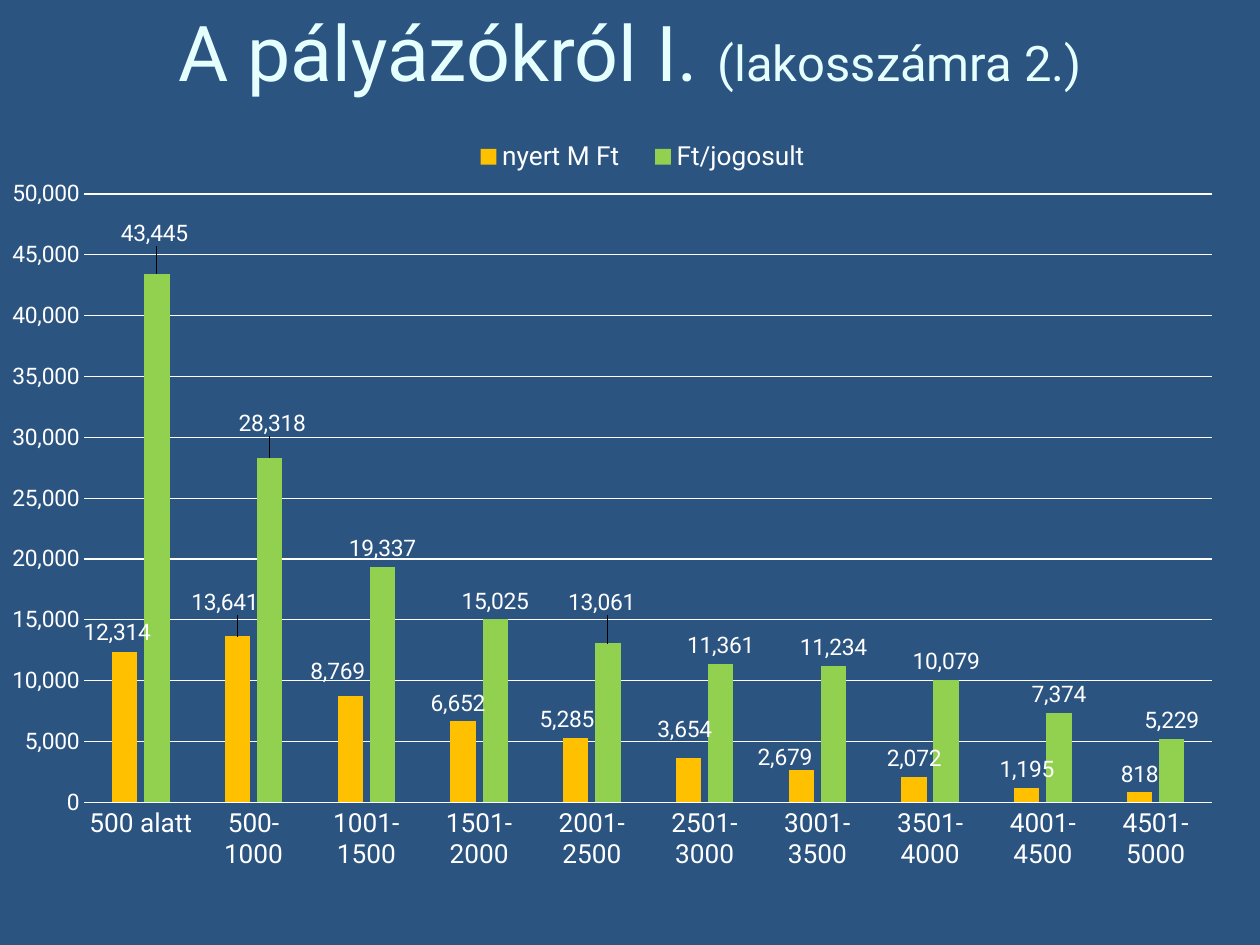
from dataclasses import dataclass, field

import lxml.etree
import pptx
import pptx.chart.data
import pptx.dml.color
import pptx.enum.chart
import pptx.enum.text
import pptx.oxml.ns
import pptx.util

Inches = pptx.util.Inches
qn = pptx.oxml.ns.qn


@dataclass(frozen=True)
class Theme:
    font: str = "Roboto"
    back: str = "2B5481"
    title: str = "E5FFFF"
    text: str = "FFFFFF"
    won: str = "FFC000"
    per_head: str = "92D050"
    title_pt: int = 44
    subtitle_pt: int = 28
    axis_pt: int = 15
    value_pt: int = 13
    line_pt: float = 0.75
    number: str = "#,##0"


@dataclass(frozen=True)
class Series:
    name: str
    values: tuple[int, ...]
    color: str
    # Label shifts by point, in thousandths of the chart's width and height
    shifts: dict[int, tuple[int, int]] = field(default_factory=dict)


THEME = Theme()
BANDS = ("500 alatt", "500-1000") + tuple(
    f"{low + 1}-{low + 500}" for low in range(1000, 5000, 500))
SERIES = (
    Series("nyert M Ft",
           (12314, 13641, 8769, 6652, 5285, 3654, 2679, 2072, 1195, 818),
           THEME.won,
           {0: (-6, -2), 1: (-10, -19), 2: (-10, -7), 3: (-4, 0),
            4: (-7, 0), 5: (-3, -12), 6: (-13, 7)}),
    Series("Ft/jogosult",
           (43445, 28318, 19337, 15025, 13061, 11361, 11234, 10079, 7374, 5229),
           THEME.per_head,
           {0: (-2, -26), 1: (2, -19), 4: (-5, -27)}),
)


def rgb(color: str) -> pptx.dml.color.RGBColor:
    return pptx.dml.color.RGBColor.from_string(color)


def format_font(font, *, size: float, color: str = THEME.text) -> None:
    font.name = THEME.font
    font.size = pptx.util.Pt(size)
    font.bold = False
    font.color.rgb = rgb(color)


def add_text(p, text: str, *, size: float, color: str) -> None:
    r = p.add_run()
    r.text = text
    format_font(r.font, size=size, color=color)


def format_line(line) -> None:
    line.color.rgb = rgb(THEME.text)
    line.width = pptx.util.Pt(THEME.line_pt)


def make_layout(**values) -> lxml.etree.ElementBase:
    """Build a manual chart layout from its named settings."""
    layout = pptx.oxml.parse_xml(
        f"<c:layout {pptx.oxml.ns.nsdecls('c')}><c:manualLayout/></c:layout>")
    for name, value in values.items():
        lxml.etree.SubElement(layout[0], qn(f"c:{name}")).set("val", str(value))
    return layout


def set_layout(parent, after: str | None, **values) -> None:
    """Replace the parent's layout, placing it after the named child."""
    for old in parent.findall(qn("c:layout")):
        parent.remove(old)
    index = 0 if after is None else parent.index(parent.find(qn(after))) + 1
    parent.insert(index, make_layout(**values))


def format_series(plot_series, series: Series) -> None:
    outside = pptx.enum.chart.XL_LABEL_POSITION.OUTSIDE_END
    plot_series.format.fill.solid()
    plot_series.format.fill.fore_color.rgb = rgb(series.color)
    plot_series.invert_if_negative = False
    labels = plot_series.data_labels
    labels.show_value = True
    labels.number_format = THEME.number
    labels.number_format_is_linked = False
    labels.position = outside
    format_font(labels.font, size=THEME.value_pt)
    # Labels moved away from their bars
    for i in series.shifts:
        label = plot_series.points[i].data_label
        format_font(label.font, size=THEME.value_pt)
        label.position = outside
    for d_lbl in labels._element.findall(qn("c:dLbl")):
        dx, dy = series.shifts[int(d_lbl.find(qn("c:idx")).get("val"))]
        set_layout(d_lbl, "c:idx", x=dx / 1000, y=dy / 1000)
        number = lxml.etree.Element(qn("c:numFmt"))
        number.set("formatCode", THEME.number)
        number.set("sourceLinked", "0")
        d_lbl.insert(2, number)


def add_title(slide) -> None:
    sp = slide.shapes.title
    sp.left, sp.top, sp.width, sp.height = map(Inches, (0.5, 0, 9, 0.81))
    tf = sp.text_frame
    tf.vertical_anchor = pptx.enum.text.MSO_ANCHOR.MIDDLE
    p = tf.paragraphs[0]
    p.alignment = pptx.enum.text.PP_ALIGN.CENTER
    add_text(p, "A pályázókról I. ", size=THEME.title_pt, color=THEME.title)
    add_text(p, "(lakosszámra 2.)", size=THEME.subtitle_pt, color=THEME.title)


def add_bar_chart(slide) -> None:
    data = pptx.chart.data.CategoryChartData(number_format=THEME.number)
    data.categories = BANDS
    for series in SERIES:
        data.add_series(series.name, series.values)
    chart = slide.shapes.add_chart(
        pptx.enum.chart.XL_CHART_TYPE.COLUMN_CLUSTERED,
        Inches(0), Inches(0.81), Inches(10), Inches(6.69), data).chart
    format_font(chart.font, size=10)
    chart.has_title = False

    # Bars
    plot = chart.plots[0]
    plot.gap_width, plot.overlap = 219, -27
    plot.vary_by_categories = False
    for plot_series, series in zip(plot.series, SERIES):
        format_series(plot_series, series)
    set_layout(chart._chartSpace.chart.plotArea, None,
               layoutTarget="inner", xMode="edge", yMode="edge",
               x=0.067, y=0.109, w=0.895, h=0.722)

    # Axes
    none = pptx.enum.chart.XL_TICK_MARK.NONE
    cat, val = chart.category_axis, chart.value_axis
    for axis, size in ((cat, THEME.axis_pt), (val, THEME.value_pt)):
        axis.major_tick_mark = axis.minor_tick_mark = none
        format_font(axis.tick_labels.font, size=size)
    format_line(cat.format.line)
    val.format.line.fill.background()
    val.minimum_scale, val.maximum_scale, val.major_unit = 0, 50000, 5000
    val.tick_labels.number_format = THEME.number
    val.tick_labels.number_format_is_linked = False
    format_line(val.major_gridlines.format.line)

    # Legend above the plot
    chart.has_legend = True
    legend = chart.legend
    legend.position = pptx.enum.chart.XL_LEGEND_POSITION.BOTTOM
    legend.include_in_layout = False
    format_font(legend.font, size=THEME.axis_pt)
    set_layout(legend._element, "c:legendPos", xMode="edge", yMode="edge",
               x=0.36, y=0.04, w=0.3, h=0.05)


def main() -> None:
    prs = pptx.Presentation()
    prs.slide_width, prs.slide_height = Inches(10), Inches(7.5)
    slide = prs.slides.add_slide(prs.slide_layouts.get_by_name("Title Only"))
    slide.background.fill.solid()
    slide.background.fill.fore_color.rgb = rgb(THEME.back)
    add_title(slide)
    add_bar_chart(slide)
    prs.save("out.pptx")


if __name__ == "__main__":
    main()
